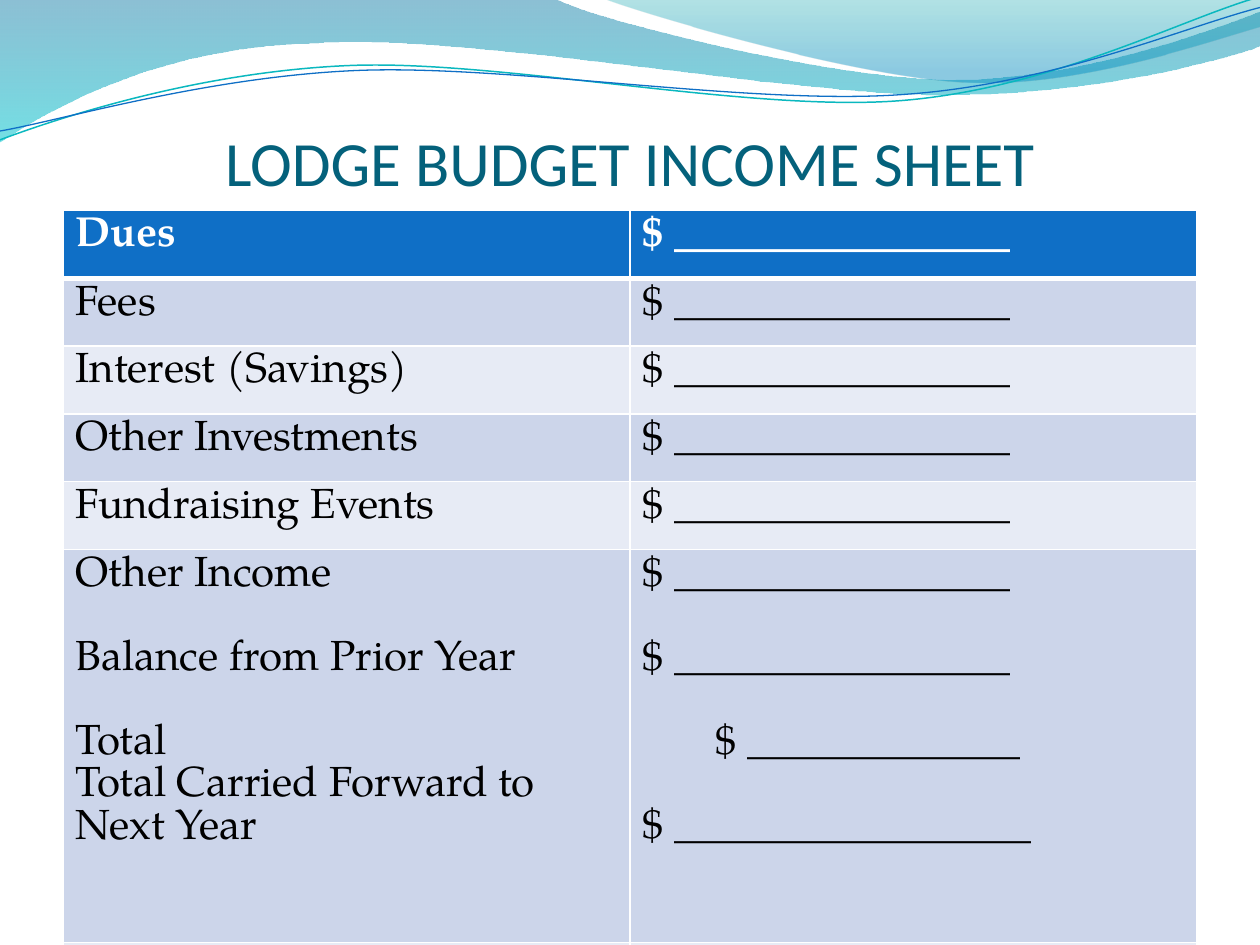
import math

import pptx
import pptx.dml.color
import pptx.enum.text
import pptx.oxml
import pptx.oxml.ns
import pptx.util

Inches, Pt = pptx.util.Inches, pptx.util.Pt
qn = pptx.oxml.ns.qn
NS = pptx.oxml.ns.nsdecls("a")

COLORS = {
    "title": "04617B", "header": "0F6FC6", "band_dark": "CCD5EA", "band_light": "E7EBF5",
    "white": "FFFFFF", "black": "000000", "teal": "0AB8BF",
    "wave_top": "0074A1", "wave_bottom": "00C6CF",
    "crest_top": "00A1A9", "crest_bottom": "008BBF",
}

# Outlines in inches: a pair is a straight step, six numbers are a Bezier curve.
WAVE = [(0, 0), (4.4, -0.01), (4.76, 0.17, 6.64, 0.63, 7.58, 0.63),
        (8.53, 0.63, 9.58, 0.26, 10, 0.09), (10.01, 0.36),
        (9.83, 0.44, 8.7, 0.76, 7.46, 0.75), (6.22, 0.75, 3.82, 0.28, 2.57, 0.34),
        (1.29, 0.36, 0.46, 0.83, -0.01, 1.13), (0, 0)]
CREST = [(4.79, -0.01), (5.09, 0.11, 6.82, 0.62, 7.69, 0.65),
         (8.56, 0.69, 9.61, 0.32, 10, 0.21), (10, 0), (4.79, -0.01)]
TEAL_LINE = [(0, 1.11), (0.48, 0.93, 1.58, 0.57, 2.77, 0.52),
             (3.95, 0.47, 5.93, 0.89, 7.13, 0.8), (8.33, 0.71, 9.38, 0.15, 9.98, -0.02)]
BLUE_LINE = [(0, 1.04), (0.47, 0.96, 1.64, 0.61, 2.83, 0.56),
             (4.03, 0.51, 5.97, 0.84, 7.17, 0.75), (8.36, 0.67, 9.41, 0.21, 10, 0.06)]
TILT = -2.7

BLANK = "$ " + "_" * 16
GAP = {"space_before": Pt(24)}
# Each cell is a list of (text, paragraph format, left indent in inches).
ROWS = [[[(name, {}, 0)], [(BLANK, {}, 0)]] for name in
        ("Dues", "Fees", "Interest (Savings)", "Other Investments", "Fundraising Events")]
ROWS += [
    [[("Other Income", {}, 0), ("Balance from Prior Year", GAP, 0), ("Total", GAP, 0),
      ("Total Carried Forward to Next Year", {}, 0)],
     [(BLANK, {}, 0), (BLANK, GAP, 0), ("$ " + "_" * 13, GAP, 0.58),
      ("$ " + "_" * 17, GAP, 0)]],
    [[], []],
]
TABLE_HEIGHT, TALL_ROW = 6.35, 3.12
ROW_HEIGHT = (TABLE_HEIGHT - TALL_ROW) / (len(ROWS) - 1)
ROW_HEIGHTS = [ROW_HEIGHT] * 5 + [TALL_ROW, ROW_HEIGHT]


def rgb(name):
    return pptx.dml.color.RGBColor.from_string(COLORS[name])


def set_all(obj, values):
    for key, value in values.items():
        setattr(obj, key, value)


def rotate(outline, degrees, cx, cy):
    cos, sin = math.cos(math.radians(degrees)), math.sin(math.radians(degrees))
    return [tuple(v for x, y in zip(seg[::2], seg[1::2])
                  for v in (cx + (x - cx) * cos - (y - cy) * sin,
                            cy + (x - cx) * sin + (y - cy) * cos))
            for seg in outline]


class SlideBuilder:
    body_font = "TeX Gyre Pagella"
    title_font = "Calibri"

    def __init__(self, prs):
        self.s = prs.slides.add_slide(prs.slide_layouts[6])

    def outline(self, outline, closed):
        """Build a freeform, then join each three steps of a curve into one Bezier."""
        points = [(Inches(x), Inches(y)) for seg in outline
                  for x, y in zip(seg[::2], seg[1::2])]
        builder = self.s.shapes.build_freeform(*points[0])
        builder.add_line_segments(points[1:], close=closed)
        sp = builder.convert_to_shape()
        sp.shadow.inherit = False
        steps = iter(list(sp._element.spPr.iter(qn("a:lnTo"))))
        for seg in outline[1:]:
            step = next(steps)
            if len(seg) == 6:
                curve = pptx.oxml.parse_xml(f"<a:cubicBezTo {NS}/>")
                step.addprevious(curve)
                for part in (step, next(steps), next(steps)):
                    curve.append(part[0])
                    part.getparent().remove(part)
        return sp

    def wave(self, outline, stops):
        """Add a vertical gradient shape; stops are (position, color, opacity %)."""
        sp = self.outline(outline, True)
        sp.line.fill.background()
        sp.fill.gradient()
        sp.fill.gradient_angle = 270
        for stop, (position, color, _) in zip(sp.fill.gradient_stops, stops):
            stop.position = position
            stop.color.rgb = rgb(color)
        for clr, (_, _, opacity) in zip(sp._element.spPr.iter(qn("a:srgbClr")), stops):
            clr.append(pptx.oxml.parse_xml(f'<a:alpha {NS} val="{opacity * 1000}"/>'))

    def curve(self, outline, center, color, width):
        """Add a tilted open line, stored level and turned about its center."""
        sp = self.outline(rotate(outline, -TILT, *center), False)
        sp.rotation = TILT
        sp.fill.background()
        sp.line.color.rgb = rgb(color)
        sp.line.width = Pt(width)

    def run(self, p, text, color, **font):
        r = p.add_run()
        r.text = text
        set_all(r.font, font)
        r.font.color.rgb = rgb(color)

    def title(self, text, x, y, w, h):
        tf = self.s.shapes.add_textbox(Inches(x), Inches(y), Inches(w), Inches(h)).text_frame
        set_all(tf, {"word_wrap": True, "margin_left": 0, "margin_right": 0,
                     "margin_top": Inches(0.05), "margin_bottom": 0,
                     "vertical_anchor": pptx.enum.text.MSO_ANCHOR.BOTTOM})
        p = tf.paragraphs[0]
        p.alignment = pptx.enum.text.PP_ALIGN.CENTER
        self.run(p, text, "title", name=self.title_font, size=Pt(36))

    def borders(self, cell, widths):
        tcPr = cell._tc.get_or_add_tcPr()
        for i, (side, width) in enumerate(widths.items()):
            tcPr.insert(i, pptx.oxml.parse_xml(
                f'<a:ln{side} {NS} w="{Pt(width)}"><a:solidFill>'
                f'<a:srgbClr val="{COLORS["white"]}"/></a:solidFill></a:ln{side}>'))

    def cell(self, cell, paragraphs, row):
        header = row == 0
        cell.fill.solid()
        cell.fill.fore_color.rgb = rgb(
            "header" if header else "band_dark" if row % 2 else "band_light")
        self.borders(cell, {"L": 1, "R": 1, "T": 3 if row == 1 else 1, "B": 3 if header else 1})
        tf = cell.text_frame
        for i, (text, fmt, indent) in enumerate(paragraphs):
            p = tf.add_paragraph() if i else tf.paragraphs[0]
            set_all(p, fmt)
            if indent:
                p._p.get_or_add_pPr().set("marL", str(Inches(indent)))
            self.run(p, text, "white" if header else "black",
                     name=self.body_font, size=Pt(24), bold=header)

    def table(self, rows, heights, x, y, w):
        table = self.s.shapes.add_table(len(rows), len(rows[0]), Inches(x), Inches(y),
                                        Inches(w), Inches(sum(heights))).table
        set_all(table, {"first_row": True, "horz_banding": False})
        for i, (row, height) in enumerate(zip(rows, heights)):
            table.rows[i].height = Inches(height)
            for j, paragraphs in enumerate(row):
                self.cell(table.cell(i, j), paragraphs, i)


def main():
    prs = pptx.Presentation()
    set_all(prs, {"slide_width": Inches(10), "slide_height": Inches(7.5)})
    b = SlideBuilder(prs)
    b.wave(WAVE, [(0, "wave_top", 45), (1, "wave_bottom", 55)])
    b.wave(CREST, [(0, "crest_top", 30), (0.8, "crest_bottom", 45)])
    b.curve(TEAL_LINE, (4.99, 0.58), "teal", 0.85)
    b.curve(BLUE_LINE, (5, 0.59), "header", 0.75)
    b.title("LODGE BUDGET INCOME SHEET", 0.5, 0.77, 9, 0.81)
    b.table(ROWS, ROW_HEIGHTS, 0.5, 1.67, 9)
    prs.save("out.pptx")


if __name__ == "__main__":
    main()
